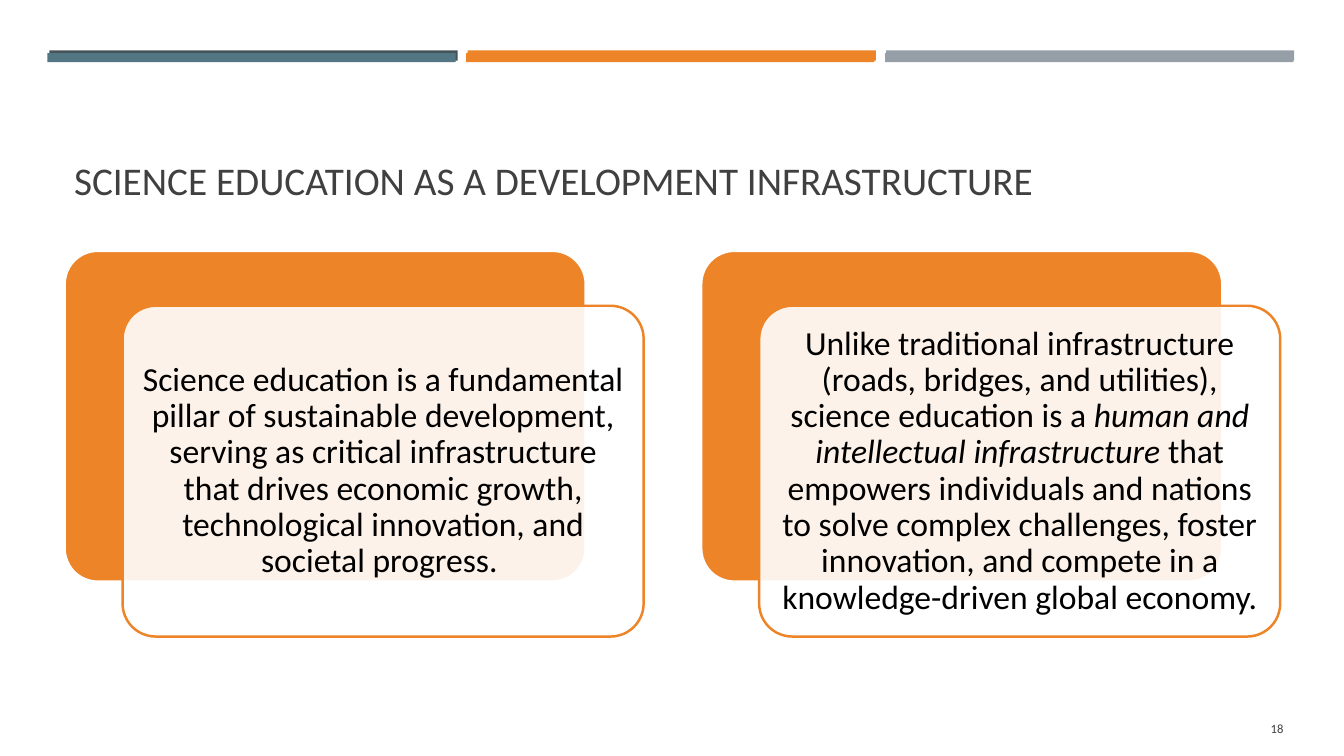
from lxml import etree
from pptx import Presentation
from pptx.dml.color import RGBColor
from pptx.enum import shapes, text
from pptx.oxml.ns import qn
from pptx.util import Pt

FONT = "Calibri"
INK = {
    "slate": "465359", "teal": "537685", "orange": "ED8428",
    "gray": "969FA7", "white": "FFFFFF", "dark": "404040", "black": "000000",
}
KIND = shapes.MSO_SHAPE
ALIGN = text.PP_ALIGN
ANCHOR = text.MSO_ANCHOR

# Each card is a list of (words, italic) runs
CARDS = [
    [("Science education is a fundamental pillar of sustainable development, "
      "serving as critical infrastructure that drives economic growth, "
      "technological innovation, and societal progress. ", False)],
    [("Unlike traditional infrastructure (roads, bridges, and utilities), "
      "science education is a ", False),
     ("human and intellectual infrastructure", True),
     (" that empowers individuals and nations to solve complex challenges, "
      "foster innovation, and compete in a knowledge-driven global economy.",
      False)],
]


def color(name):
    return RGBColor.from_string(INK[name])


def add_box(slide, kind, area, fill, line=None, alpha=None):
    box = slide.shapes.add_shape(kind, *map(Pt, area))
    box.shadow.inherit = False
    box.fill.solid()
    box.fill.fore_color.rgb = color(fill)
    if alpha:
        tint = box.fill._xPr.find(qn("a:solidFill"))[0]
        etree.SubElement(tint, qn("a:alpha")).set("val", str(alpha * 1000))
    if line:
        box.line.color.rgb = color(line)
        box.line.width = Pt(1.75)
    else:
        box.line.fill.background()
    return box


def add_text(slide, area, runs, size, ink, align, anchor, inset=(7.2, 3.6)):
    frame = slide.shapes.add_textbox(*map(Pt, area)).text_frame
    frame.word_wrap = True
    frame.vertical_anchor = anchor
    frame.margin_left = frame.margin_right = Pt(inset[0])
    frame.margin_top = frame.margin_bottom = Pt(inset[1])
    para = frame.paragraphs[0]
    para.alignment = align
    for words, slant in runs:
        run = para.add_run()
        run.text = words
        run.font.name = FONT
        run.font.size = Pt(size)
        run.font.italic = slant
        run.font.color.rgb = color(ink)
    return para


def add_bars(slide, left, top, pitch, height, inks):
    for i, ink in enumerate(inks):
        area = (left + i * pitch, top, 291.6, height)
        add_box(slide, KIND.RECTANGLE, area, ink)


def add_card(slide, left, runs):
    # Solid panel behind, pale panel shifted down and right
    layers = [(0, 179.2, "orange", "white", None),
              (41.4, 218.4, "white", "orange", 90)]
    for shift, top, fill, line, alpha in layers:
        area = (left + shift, top, 372.2, 236.3)
        box = add_box(slide, KIND.ROUNDED_RECTANGLE, area, fill, line, alpha)
        box.adjustments[0] = 0.1
    para = add_text(slide, (left + 48.3, 225.3, 358.4, 222.5), runs, 24,
                    "black", ALIGN.CENTER, ANCHOR.MIDDLE, (7.2, 7.2))
    para.line_spacing = 0.9


def main():
    deck = Presentation()
    deck.slide_width, deck.slide_height = Pt(960), Pt(540)
    slide = deck.slides.add_slide(deck.slide_layouts[6])

    # Header bars: back row, then front row
    add_bars(slide, 35.3, 36, 298.8, 7.4, ["slate", "orange", "gray"])
    add_bars(slide, 33.8, 38, 299.2, 6.4, ["teal", "orange", "gray"])

    # Title
    title = [("SCIENCE EDUCATION AS A DEVELOPMENT INFRASTRUCTURE", False)]
    add_text(slide, (45.8, 55.6, 868.3, 93.4), title, 28, "dark",
             ALIGN.LEFT, ANCHOR.BOTTOM)

    # Cards
    for i, runs in enumerate(CARDS):
        add_card(slide, 46.2 + i * 454.7, runs)

    # Page number
    add_text(slide, (831.6, 506.2, 92.2, 28.8), [("18", False)], 9, "dark",
             ALIGN.RIGHT, ANCHOR.MIDDLE)

    deck.save("out.pptx")


if __name__ == "__main__":
    main()
